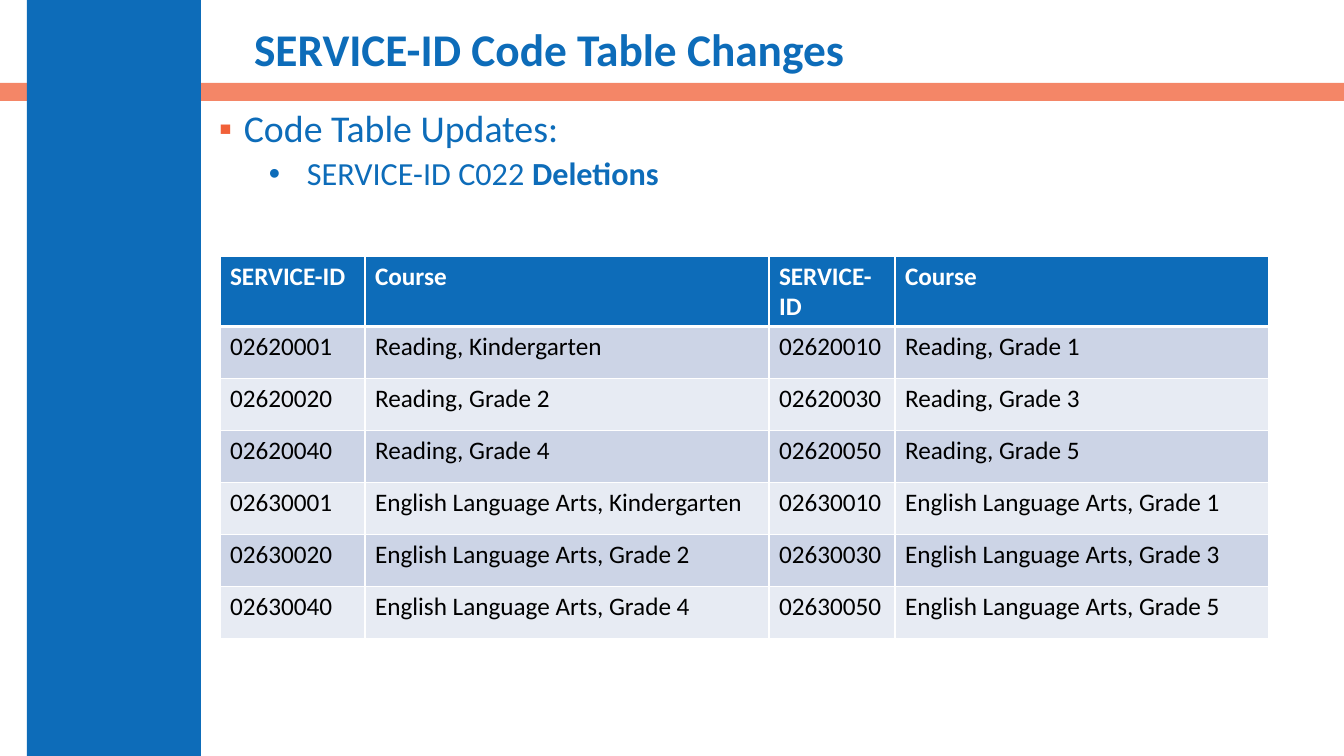
from lxml.etree import SubElement
from pptx import Presentation
from pptx.dml.color import RGBColor
from pptx.enum.shapes import MSO_SHAPE
from pptx.enum.text import MSO_ANCHOR, MSO_AUTO_SIZE, PP_ALIGN
from pptx.oxml.ns import qn
from pptx.util import Pt

EMU_PER_PX = 914400 / 100.8
FONT = "Calibri"
BLUE = RGBColor(0x0D, 0x6C, 0xB9)
ORANGE = RGBColor(0xF1, 0x60, 0x38)
WHITE = RGBColor(0xFF, 0xFF, 0xFF)
BLACK = RGBColor(0x00, 0x00, 0x00)
ROW_FILLS = (RGBColor(0xCC, 0xD4, 0xE6), RGBColor(0xE7, 0xEB, 0xF3))

HEADER = ("SERVICE-ID", "Course", "SERVICE-ID", "Course")
COURSES = (
    ("02620001", "Reading, Kindergarten", "02620010", "Reading, Grade 1"),
    ("02620020", "Reading, Grade 2", "02620030", "Reading, Grade 3"),
    ("02620040", "Reading, Grade 4", "02620050", "Reading, Grade 5"),
    ("02630001", "English Language Arts, Kindergarten", "02630010", "English Language Arts, Grade 1"),
    ("02630020", "English Language Arts, Grade 2", "02630030", "English Language Arts, Grade 3"),
    ("02630040", "English Language Arts, Grade 4", "02630050", "English Language Arts, Grade 5"),
)
COLUMN_WIDTHS = (145, 404, 126, 374)
HEADER_HEIGHT, ROW_HEIGHT = 70, 52


def px(length):
    """Turn whole pixels into EMU."""
    return round(length * EMU_PER_PX)


def style(font, size, color, bold=False):
    """Set the face, size, colour and weight of a font."""
    font.name, font.size, font.bold = FONT, Pt(size), bold
    font.color.rgb = color


def add_band(page, box, color, opacity=100):
    """Draw a plain filled rectangle in the box."""
    band = page.shapes.add_shape(MSO_SHAPE.RECTANGLE, *map(px, box))
    band.shadow.inherit = False
    band.line.fill.background()
    band.fill.solid()
    band.fill.fore_color.rgb = color
    if opacity < 100:
        tint = next(band.fill._xPr.iter(qn("a:srgbClr")))
        SubElement(tint, qn("a:alpha"), val=str(opacity * 1000))


def place_title(page, box, text):
    """Move the title placeholder to the box and format it."""
    title = page.shapes.title
    title.left, title.top, title.width, title.height = map(px, box)
    frame = title.text_frame
    frame.text = text
    frame.auto_size = MSO_AUTO_SIZE.NONE
    frame.vertical_anchor = MSO_ANCHOR.MIDDLE
    para = frame.paragraphs[0]
    para.alignment, para.line_spacing = PP_ALIGN.LEFT, 0.9
    style(para.runs[0].font, 32.4, BLUE, True)


def add_bullet(para, symbol, color, margin, hang):
    """Give the paragraph a coloured bullet and a hanging indent."""
    properties = para._p.get_or_add_pPr()
    properties.set("marL", str(px(margin)))
    properties.set("indent", str(-px(hang)))
    bullet_color = SubElement(properties, qn("a:buClr"))
    SubElement(bullet_color, qn("a:srgbClr"), val=str(color))
    SubElement(properties, qn("a:buFont"), typeface="Arial")
    SubElement(properties, qn("a:buChar"), char=symbol)


def add_summary(page, box):
    """Write the two bullet lines above the table."""
    frame = page.shapes.add_textbox(*map(px, box)).text_frame
    frame.word_wrap = True
    heading = frame.paragraphs[0]
    heading.text = "Code Table Updates:"
    heading.line_spacing = 0.9
    add_bullet(heading, "▪", ORANGE, 25, 25)
    style(heading.runs[0].font, 27, BLUE)

    detail = frame.add_paragraph()
    detail.text = "SERVICE-ID C022 "
    detail.level = 1
    detail.line_spacing, detail.space_before = 0.9, Pt(5)
    add_bullet(detail, "•", BLUE, 88, 38)
    style(detail.runs[0].font, 23, BLUE)
    emphasis = detail.add_run()
    emphasis.text = "Deletions"
    style(emphasis.font, 23, BLUE, True)


def add_borders(cell, top, bottom):
    """Draw white borders with the given top and bottom widths in points."""
    properties = cell._tc.get_or_add_tcPr()
    for tag, width in (("a:lnL", 1), ("a:lnR", 1), ("a:lnT", top), ("a:lnB", bottom)):
        line = SubElement(properties, qn(tag), w=str(Pt(width)))
        fill = SubElement(line, qn("a:solidFill"))
        SubElement(fill, qn("a:srgbClr"), val=str(WHITE))


def add_course_table(page, box):
    """Fill the box with the table of deleted courses."""
    rows = (HEADER, *COURSES)
    table = page.shapes.add_table(len(rows), len(HEADER), *map(px, box)).table
    for column, width in zip(table.columns, COLUMN_WIDTHS):
        column.width = px(width)
    for index, values in enumerate(rows):
        is_header = index == 0
        table.rows[index].height = px(HEADER_HEIGHT if is_header else ROW_HEIGHT)
        for cell, value in zip(table.rows[index].cells, values):
            cell.text = value
            add_borders(cell, 3 if index == 1 else 1, 3 if is_header else 1)
            cell.fill.solid()
            cell.fill.fore_color.rgb = BLUE if is_header else ROW_FILLS[(index - 1) % 2]
            span = cell.text_frame.paragraphs[0].runs[0]
            style(span.font, 18, WHITE if is_header else BLACK, is_header)


def build_page(deck):
    """Compose the slide of code table changes."""
    page = deck.slides.add_slide(deck.slide_layouts[5])
    add_band(page, (0, 83, 1344, 18), ORANGE, 76)
    add_band(page, (27, 0, 174, 756), BLUE)
    add_summary(page, (209, 105, 991, 100))
    place_title(page, (244, 22, 1049, 60), "SERVICE-ID Code Table Changes")
    table_height = HEADER_HEIGHT + ROW_HEIGHT * len(COURSES)
    add_course_table(page, (220, 256, sum(COLUMN_WIDTHS), table_height))


def main():
    """Build the deck and save it."""
    deck = Presentation()
    deck.slide_width, deck.slide_height = px(1344), px(756)
    build_page(deck)
    deck.save("out.pptx")


if __name__ == "__main__":
    main()
